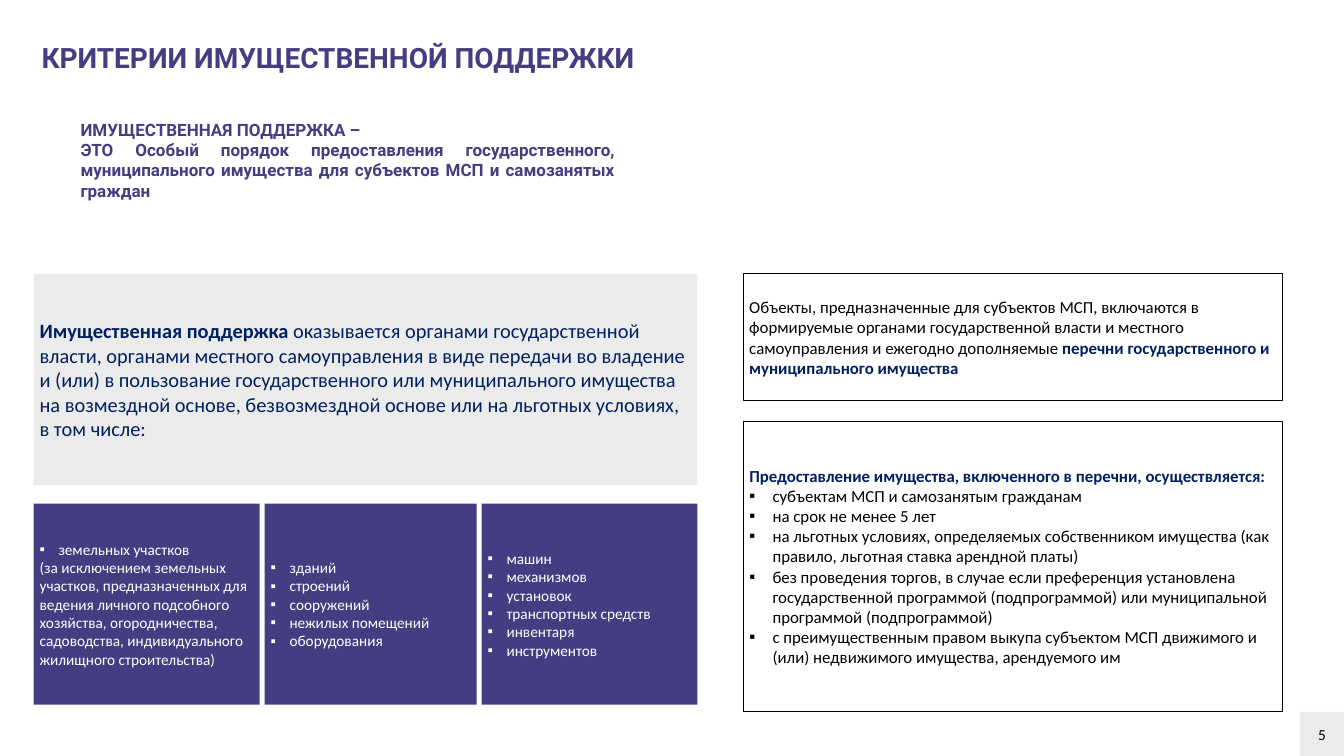
from dataclasses import dataclass

from lxml.etree import SubElement
from pptx import Presentation
from pptx.dml.color import RGBColor
from pptx.enum.shapes import MSO_SHAPE
from pptx.enum.text import MSO_ANCHOR, MSO_AUTO_SIZE, PP_ALIGN
from pptx.oxml.ns import qn
from pptx.util import Inches, Pt

TITLE = [("", [("КРИТЕРИИ ИМУЩЕСТВЕННОЙ ПОДДЕРЖКИ", "purple")])]
DEFINITION = [
    ("", [("ИМУЩЕСТВЕННАЯ ПОДДЕРЖКА –", "purple")]),
    ("", [("ЭТО Особый порядок предоставления государственного, муниципального "
           "имущества для субъектов МСП и самозанятых граждан", "purple")]),
]
SUPPORT = [("", [
    ("Имущественная поддержка ", "strong"),
    ("оказывается органами государственной власти, органами местного самоуправления "
     "в виде передачи во владение и (или) в пользование государственного или "
     "муниципального имущества на возмездной основе, безвозмездной основе или на "
     "льготных условиях, в том числе:", "navy"),
])]
REGISTERS = [("", [
    ("Объекты, предназначенные для субъектов МСП, включаются в формируемые органами "
     "государственной власти и местного самоуправления и ежегодно дополняемые ", "plain"),
    ("перечни государственного и муниципального имущества", "strong"),
])]
TERMS_HEADING = "Предоставление имущества, включенного в перечни, осуществляется:"
TERMS = [
    "субъектам МСП и самозанятым гражданам",
    "на срок не менее 5 лет",
    "на льготных условиях, определяемых собственником имущества (как правило, "
    "льготная ставка арендной платы)",
    "без проведения торгов, в случае если преференция установлена государственной "
    "программой (подпрограммой) или муниципальной программой (подпрограммой)",
    "с преимущественным правом выкупа субъектом МСП движимого и (или) недвижимого "
    "имущества, арендуемого им",
]
LAND_NOTE = (
    "(за исключением земельных участков, предназначенных для ведения личного "
    "подсобного хозяйства, огородничества, садоводства, индивидуального жилищного "
    "строительства)"
)
PROPERTY_KINDS = [
    (3.7, ["земельных участков"], LAND_NOTE),
    (3.47, ["зданий", "строений", "сооружений", "нежилых помещений", "оборудования"], ""),
    (3.53, ["машин", "механизмов", "установок", "транспортных средств", "инвентаря",
            "инструментов"], ""),
]
PAGE_NUMBER = "5"

SLIDE_WIDTH, SLIDE_HEIGHT = 21.99, 12.37
COLUMNS = {"title": (0.58, 14.25), "definition": (1.22, 8.94),
           "left": (0.55, 10.86), "right": (12.16, 8.82)}
ROWS = {"title": (0.68, 1.1), "definition": (1.9, 1.78), "support": (4.48, 3.46),
        "registers": (4.48, 2.08), "terms": (6.89, 4.75), "kinds": (8.24, 3.29)}
KIND_GAP = 0.08
PAGE_SIDE = 0.72


@dataclass(frozen=True)
class Theme:
    purple: str = "443D81"
    navy: str = "002060"
    black: str = "000000"
    white: str = "FFFFFF"
    grey: str = "EBEBEB"
    heading_font: str = "Roboto"
    body_font: str = "Calibri"
    title_size: float = 33
    definition_size: float = 20
    support_size: float = 24
    terms_size: float = 19.8
    small_size: float = 18


THEME = Theme()
STYLES = {
    "purple": (THEME.purple, True),
    "strong": (THEME.navy, True),
    "navy": (THEME.navy, False),
    "plain": (THEME.black, False),
    "light": (THEME.white, False),
}


def bulleted(items, style):
    return [("▪", [(item, style)]) for item in items]


def cell(column, row):
    (left, width), (top, height) = COLUMNS[column], ROWS[row]
    return [Inches(length) for length in (left, top, width, height)]


def set_bullet(paragraph, mark, indent):
    properties = paragraph._p.get_or_add_pPr()
    distance = Inches(indent) if mark else 0
    properties.set("marL", str(distance))
    properties.set("indent", str(-distance))
    if mark:
        SubElement(properties, qn("a:buFont"), typeface="Arial")
        SubElement(properties, qn("a:buChar"), char=mark)
    else:
        SubElement(properties, qn("a:buNone"))


def write(shape, lines, size, font=THEME.body_font, align=PP_ALIGN.LEFT,
          anchor=MSO_ANCHOR.MIDDLE, spacing=1.0, indent=0.31):
    frame = shape.text_frame
    frame.word_wrap = True
    frame.auto_size = MSO_AUTO_SIZE.NONE
    frame.vertical_anchor = anchor
    for index, (mark, runs) in enumerate(lines):
        paragraph = frame.add_paragraph() if index else frame.paragraphs[0]
        set_bullet(paragraph, mark, indent)
        paragraph.alignment = align
        paragraph.line_spacing = spacing
        paragraph.space_before = Pt(0)
        for text, style in runs:
            color, bold = STYLES[style]
            run = paragraph.add_run()
            run.text = text
            run.font.name = font
            run.font.size = Pt(size)
            run.font.bold = bold
            run.font.color.rgb = RGBColor.from_string(color)


def paint(shape, fill, line=None):
    shape.fill.solid()
    shape.fill.fore_color.rgb = RGBColor.from_string(fill)
    if line:
        shape.line.color.rgb = RGBColor.from_string(line)
        shape.line.width = Pt(1)
    else:
        shape.line.fill.background()


def add_panel(slide, box, fill, line=None):
    shape = slide.shapes.add_shape(MSO_SHAPE.RECTANGLE, *box)
    shape.shadow.inherit = False
    paint(shape, fill, line)
    return shape


def place(shape, box):
    shape.left, shape.top, shape.width, shape.height = box
    return shape


def main():
    presentation = Presentation()
    presentation.slide_width = Inches(SLIDE_WIDTH)
    presentation.slide_height = Inches(SLIDE_HEIGHT)
    slide = presentation.slides.add_slide(presentation.slide_layouts[1])

    title = place(slide.shapes.title, cell("title", "title"))
    write(title, TITLE, THEME.title_size, font=THEME.heading_font,
          anchor=MSO_ANCHOR.TOP, spacing=0.9)

    terms = place(slide.placeholders[1], cell("right", "terms"))
    paint(terms, THEME.white, THEME.black)
    write(terms, [("", [(TERMS_HEADING, "strong")])] + bulleted(TERMS, "plain"),
          THEME.terms_size, indent=0.38)

    definition = slide.shapes.add_textbox(*cell("definition", "definition"))
    write(definition, DEFINITION, THEME.definition_size, font=THEME.heading_font,
          align=PP_ALIGN.JUSTIFY, anchor=MSO_ANCHOR.TOP)

    registers = add_panel(slide, cell("right", "registers"), THEME.white, THEME.black)
    write(registers, REGISTERS, THEME.terms_size)

    support = add_panel(slide, cell("left", "support"), THEME.grey)
    write(support, SUPPORT, THEME.support_size)

    left = COLUMNS["left"][0]
    top, height = ROWS["kinds"]
    for width, items, note in PROPERTY_KINDS:
        box = [Inches(length) for length in (left, top, width, height)]
        lines = bulleted(items, "light") + ([("", [(note, "light")])] if note else [])
        write(add_panel(slide, box, THEME.purple), lines, THEME.small_size)
        left += width + KIND_GAP

    corner = (SLIDE_WIDTH - PAGE_SIDE, SLIDE_HEIGHT - PAGE_SIDE, PAGE_SIDE, PAGE_SIDE)
    page = add_panel(slide, [Inches(length) for length in corner], THEME.grey)
    write(page, [("", [(PAGE_NUMBER, "plain")])], THEME.small_size, align=PP_ALIGN.CENTER)

    presentation.save("out.pptx")


if __name__ == "__main__":
    main()
